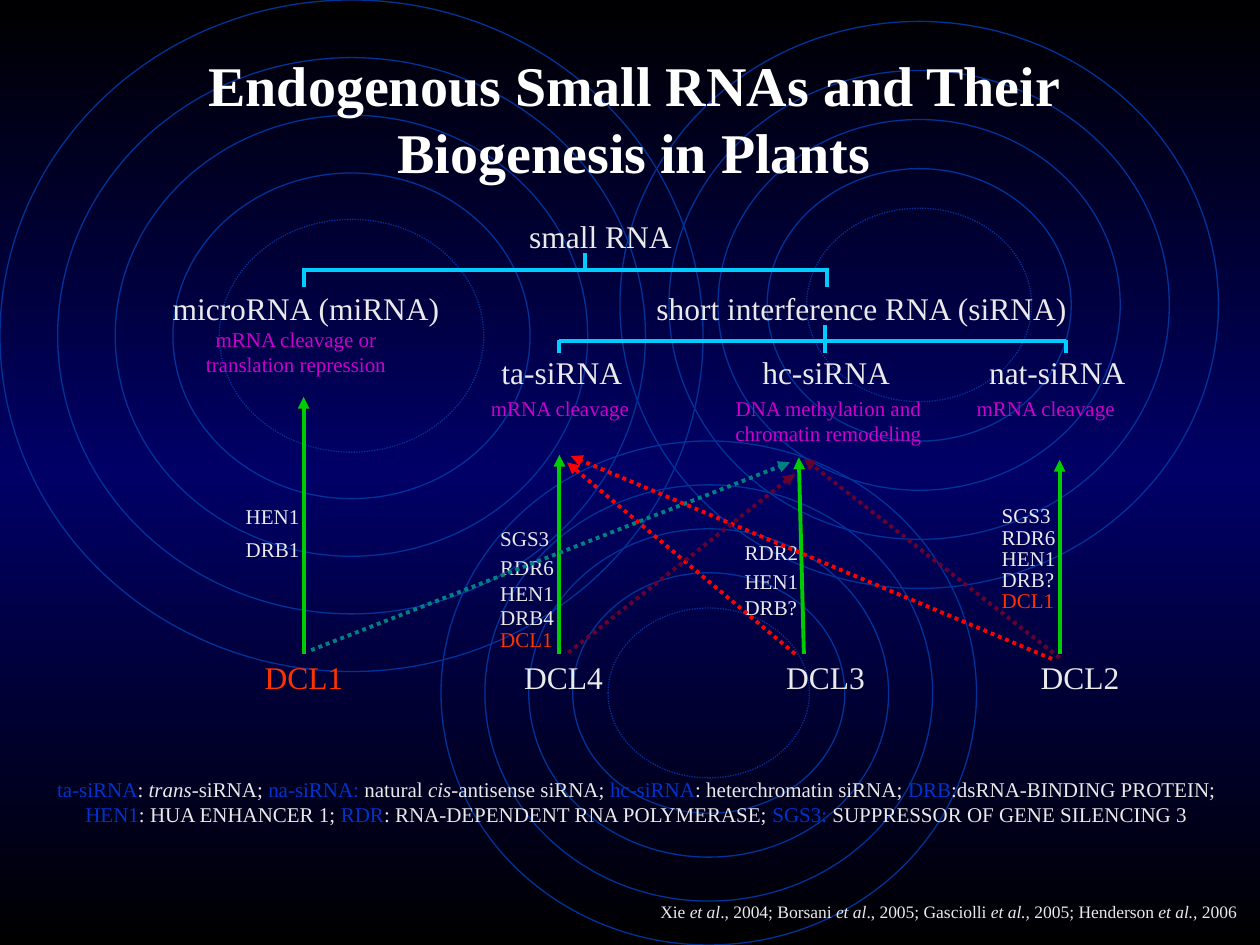
import copy
import pptx
import pptx.dml.color
import pptx.enum.dml
import pptx.enum.shapes
import pptx.enum.text
import pptx.oxml
import pptx.oxml.ns
import pptx.util

FONT = "Times New Roman"
LIGHT, MAGENTA, ORANGE, BLUE = "EAEAEA", "CC00CC", "FF3300", "0033CC"
CYAN, GREEN, TEAL, RED, MAROON = "00CCFF", "00CC00", "008080", "FF0000", "660033"

TITLE = "Endogenous Small RNAs and Their Biogenesis in Plants"
BACKGROUND = [(0, "000000"), (0.5, "000066"), (1, "000000")]

RIPPLES = [(0, 0, 5.58, 5.33), (3.5, 3.5, 4.25, 4), (4.92, 0.17, 4.75, 4.5)]
RING_INSETS = [0, 0.082, 0.164, 0.246, 0.312]

COLUMNS = {"miRNA": 2.41, "ta": 4.44, "hc": 6.34, "nat": 8.41}
ROWS = {"class": 2.29, "subclass": 2.8, "role": 3.14, "enzyme": 5.22, "base": 5.19}

CLASSES = [
    ("small RNA", 4.2, 1.72, 1.2),
    ("microRNA (miRNA)", 1.37, ROWS["class"], 2.19),
    ("short interference RNA (siRNA)", 5.21, ROWS["class"], 3.41),
    ("ta-siRNA", 3.98, ROWS["subclass"], 1.03),
    ("hc-siRNA", 6.05, ROWS["subclass"], 1.02),
    ("nat-siRNA", 7.85, ROWS["subclass"], 1.14),
]
ENZYMES = [("DCL1", 2.1, ORANGE), ("DCL4", 4.16, LIGHT), ("DCL3", 6.24, LIGHT), ("DCL2", 8.26, LIGHT)]
ROLES = [
    ("mRNA cleavage or translation repression", 1.4, 2.59, 1.9, 0.4),
    ("mRNA cleavage", 3.53, ROWS["role"], 1.83, 0.2),
    ("DNA methylation and chromatin remodeling", 5.66, ROWS["role"], 1.83, 0.4),
    ("mRNA cleavage", 7.65, ROWS["role"], 1.3, 0.2),
]
COFACTORS = [
    (1.95, [("HEN1", 4), ("DRB1", 4.26)]),
    (3.97, [("SGS3", 4.17), ("RDR6", 4.4), ("HEN1", 4.61), ("DRB4", 4.8), ("DCL1", 4.97)]),
    (5.91, [("RDR2", 4.28), ("HEN1", 4.51), ("DRB?", 4.72)]),
    (7.95, [("SGS3", 3.99), ("RDR6", 4.16), ("HEN1", 4.33), ("DRB?", 4.5), ("DCL1", 4.66)]),
]
BRACKETS = [
    {"stem": 4.64, "top": 2.01, "bar": 2.14, "drops": [2.41, 6.56], "bottom": 2.28},
    {"stem": 6.55, "top": 2.58, "bar": 2.71, "drops": [4.44, 6.55, 8.46], "bottom": 2.8},
]
MAIN_ARROWS = [("miRNA", 0, 3.15), ("ta", 0, 3.61), ("hc", 0.04, 3.63), ("nat", 0, 3.65)]
CROSS_ARROWS = [
    ((2.47, 5.16), (6.27, 3.67), TEAL),
    ((6.31, 5.19), (4.5, 3.67), RED),
    ((8.35, 5.23), (4.53, 3.62), RED),
    ((8.41, 5.22), (6.38, 3.64), MAROON),
    ((4.51, 5.18), (6.31, 3.76), MAROON),
]
GLOSSARY = [
    ("ta-siRNA", "term"), (": ", ""), ("trans", "italic"), ("-siRNA; ", ""),
    ("na-siRNA:", "term"), (" natural ", ""), ("cis", "italic"), ("-antisense siRNA; ", ""),
    ("hc-siRNA", "term"), (": heterchromatin siRNA; ", ""),
    ("DRB", "term"), (":dsRNA-BINDING PROTEIN; ", ""),
    ("HEN1", "term"), (": HUA ENHANCER 1; ", ""),
    ("RDR", "term"), (": RNA-DEPENDENT RNA POLYMERASE; ", ""),
    ("SGS3:", "term"), (" SUPPRESSOR OF GENE SILENCING 3", ""),
]
CITATION = [
    ("Xie ", ""), ("et al", "italic"), ("., 2004; Borsani ", ""), ("et al", "italic"),
    ("., 2005; Gasciolli ", ""), ("et al.,", "italic"), (" 2005; Henderson ", ""),
    ("et al.,", "italic"), (" 2006", ""),
]

inches = pptx.util.Inches
DOTTED = pptx.enum.dml.MSO_LINE.ROUND_DOT
CENTER = pptx.enum.text.PP_ALIGN.CENTER
LEFT = pptx.enum.text.PP_ALIGN.LEFT


def color(value):
    return pptx.dml.color.RGBColor.from_string(value)


def set_font(font, size, value, bold=False):
    font.name, font.size, font.bold = FONT, pptx.util.Pt(size), bold
    font.color.rgb = color(value)


def paint_background(slide):
    fill = slide.background.fill
    fill.gradient()
    fill.gradient_angle = 270
    stop_list = slide.element.find(".//" + pptx.oxml.ns.qn("a:gsLst"))
    stop_list.append(copy.deepcopy(stop_list[-1]))
    for stop, (position, value) in zip(fill.gradient_stops, BACKGROUND):
        stop.position = position
        stop.color.rgb = color(value)


def add_ripple(slide, left, top, width, height):
    group = slide.shapes.add_group_shape()
    for share in RING_INSETS:
        inset = share * width
        ring = group.shapes.add_shape(
            pptx.enum.shapes.MSO_SHAPE.OVAL, inches(left + inset), inches(top + inset),
            inches(width - 2 * inset), inches(height - 2 * inset))
        ring.shadow.inherit = False
        ring.fill.background()
        ring.line.color.rgb = color("003399")
        ring.line.width = pptx.util.Pt(0.75)
        if share == RING_INSETS[-1]:
            ring.line.dash_style = DOTTED


def add_line(shapes, start, end, value, arrow=False, dash=None):
    connector = shapes.add_connector(
        pptx.enum.shapes.MSO_CONNECTOR.STRAIGHT, *map(inches, start + end))
    connector.line.color.rgb = color(value)
    connector.line.width = pptx.util.Pt(2.25)
    if dash:
        connector.line.dash_style = dash
    if arrow:
        head = pptx.oxml.parse_xml('<a:tailEnd %s type="triangle"/>' % pptx.oxml.ns.nsdecls("a"))
        connector.line._get_or_add_ln().append(head)
    connector._element.spPr.append(
        pptx.oxml.parse_xml("<a:effectLst %s/>" % pptx.oxml.ns.nsdecls("a")))


def add_bracket(slide, stem, top, bar, drops, bottom):
    shapes = slide.shapes.add_group_shape().shapes
    add_line(shapes, (stem, top), (stem, bar), CYAN)
    add_line(shapes, (drops[0], bar), (drops[-1], bar), CYAN)
    for drop in drops:
        add_line(shapes, (drop, bar - 0.01), (drop, bottom), CYAN)


def add_text(slide, runs, left, top, width, height, size, value=LIGHT, align=LEFT):
    box = slide.shapes.add_textbox(*map(inches, (left, top, width, height)))
    frame = box.text_frame
    frame.word_wrap = True
    frame.margin_left = frame.margin_right = frame.margin_top = frame.margin_bottom = 0
    frame.auto_size = pptx.enum.text.MSO_AUTO_SIZE.SHAPE_TO_FIT_TEXT
    paragraph = frame.paragraphs[0]
    paragraph.alignment = align
    set_font(paragraph.font, size, value)
    for text, style in runs:
        run = paragraph.add_run()
        run.text = text
        if style == "term":
            run.font.color.rgb = color(BLUE)
        elif style == "italic":
            run.font.italic = True


def add_title(slide):
    title = slide.shapes.title
    slide.shapes._spTree.append(title._element)
    title.left, title.top, title.width, title.height = map(inches, (0.7, 0.31, 8.67, 1.25))
    title.text_frame.text = TITLE
    title.text_frame.vertical_anchor = pptx.enum.text.MSO_ANCHOR.MIDDLE
    paragraph = title.text_frame.paragraphs[0]
    paragraph.alignment = CENTER
    set_font(paragraph.font, 32, "FFFFFF", bold=True)


def main():
    presentation = pptx.Presentation()
    presentation.slide_width, presentation.slide_height = inches(10), inches(7.5)
    slide = presentation.slides.add_slide(presentation.slide_layouts[5])
    paint_background(slide)
    for ripple in RIPPLES:
        add_ripple(slide, *ripple)
    add_title(slide)
    for text, left, top, width in CLASSES:
        add_text(slide, [(text, "")], left, top, width, 0.3, 18)
    for text, left, value in ENZYMES:
        add_text(slide, [(text, "")], left, ROWS["enzyme"], 0.66, 0.3, 18, value)
    for bracket in BRACKETS:
        add_bracket(slide, **bracket)
    for column, lean, tip in MAIN_ARROWS:
        x = COLUMNS[column]
        add_line(slide.shapes, (x + lean, ROWS["base"]), (x, tip), GREEN, arrow=True)
    for text, left, top, width, height in ROLES:
        add_text(slide, [(text, "")], left, top, width, height, 12, MAGENTA, CENTER)
    for left, genes in COFACTORS:
        for gene, top in genes:
            add_text(slide, [(gene, "")], left, top, 0.48, 0.2, 12,
                     ORANGE if gene == "DCL1" else LIGHT)
    for start, end, value in CROSS_ARROWS:
        add_line(slide.shapes, start, end, value, arrow=True, dash=DOTTED)
    add_text(slide, CITATION, 5.24, 7.15, 4.71, 0.17, 10)
    add_text(slide, GLOSSARY, 0.38, 6.16, 9.34, 0.4, 12, align=CENTER)
    presentation.save("out.pptx")


if __name__ == "__main__":
    main()
